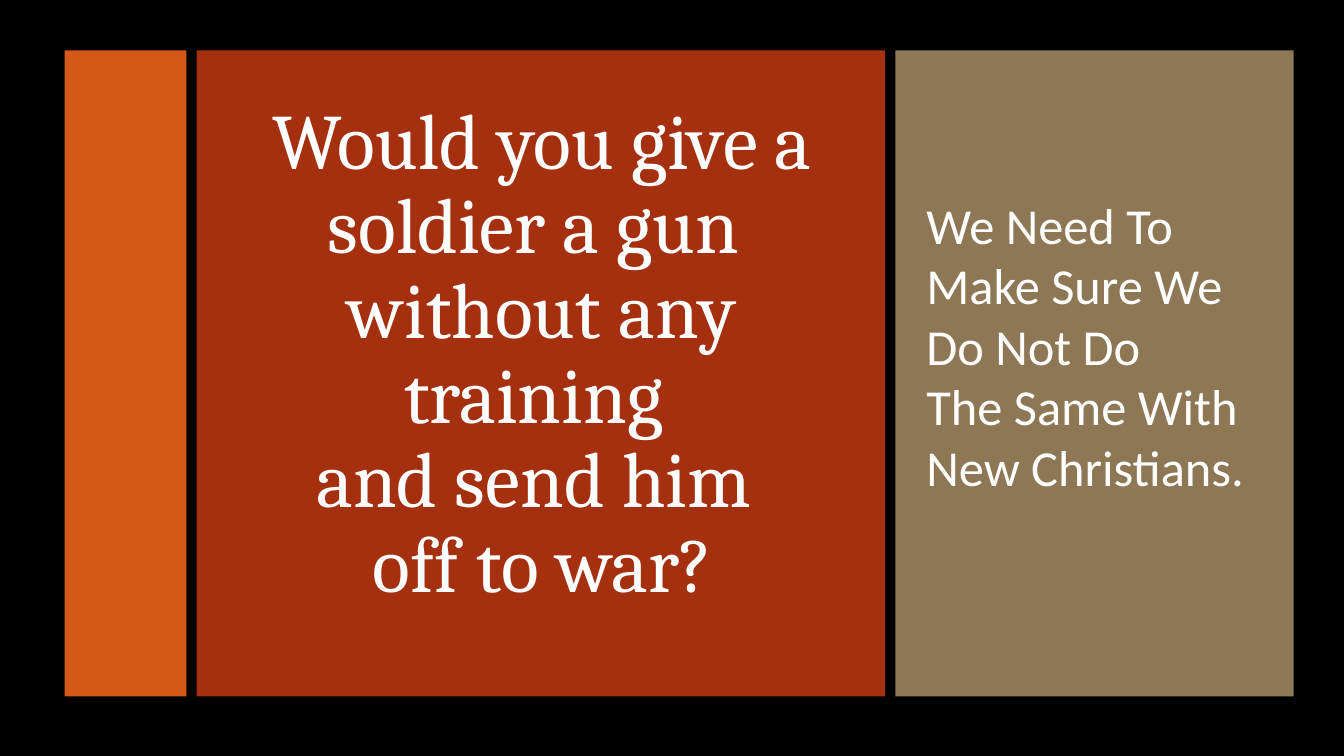
import pptx
import pptx.util
import pptx.dml.color
import pptx.enum.shapes
import pptx.enum.text

Inches = pptx.util.Inches
Pt = pptx.util.Pt
ALIGN = pptx.enum.text.PP_ALIGN

WIDTH, HEIGHT = 13.33, 7.5
BAND_TOP, BAND_HEIGHT = 0.5, 6.41
BAND_LEFT, GAP = 0.64, 0.1
ACCENT_WIDTH, QUESTION_WIDTH, ANSWER_WIDTH = 1.21, 6.83, 3.95


def color(value):
    return pptx.dml.color.RGBColor.from_string(value)


def add_panel(page, box, fill):
    panel = page.shapes.add_shape(
        pptx.enum.shapes.MSO_SHAPE.RECTANGLE, *map(Inches, box))
    panel.shadow.inherit = False
    panel.fill.solid()
    panel.fill.fore_color.rgb = color(fill)
    panel.line.fill.background()


def add_text(page, box, text, font, size, align=ALIGN.LEFT,
             line_spacing=1.0, before=0, after=0):
    frame = page.shapes.add_textbox(*map(Inches, box)).text_frame
    frame.word_wrap = True
    frame.vertical_anchor = pptx.enum.text.MSO_ANCHOR.MIDDLE
    para = frame.paragraphs[0]
    para.alignment = align
    para.line_spacing = line_spacing
    para.space_before = Pt(before)
    para.space_after = Pt(after)
    for index, line in enumerate(text.split("\n")):
        if index:
            para.add_line_break()
        span = para.add_run()
        span.text = line
        span.font.name = font
        span.font.size = Pt(size)
        span.font.color.rgb = color("FFFFFF")


def inset(box, left, top, right, bottom):
    x, y, width, height = box
    return x + left, y + top, width - left - right, height - top - bottom


def question_panel(page, box):
    add_panel(page, box, "A5300F")
    add_text(page, inset(box, 0.41, 0.43, 0.38, 0.79),
             "Would you give a soldier a gun \nwithout any training \n"
             "and send him \noff to war?",
             "Cambria", 56, align=ALIGN.CENTER, line_spacing=0.9)


def answer_panel(page, box):
    add_panel(page, box, "8E7755")
    add_text(page, inset(box, 0.21, 0.23, 0.3, 0.79),
             "We Need To Make Sure We Do Not Do \n"
             "The Same With New Christians.",
             "Calibri", 36, before=7.2, after=6)


def main():
    deck = pptx.Presentation()
    deck.slide_width = Inches(WIDTH)
    deck.slide_height = Inches(HEIGHT)
    page = deck.slides.add_slide(deck.slide_layouts[6])
    page.background.fill.solid()
    page.background.fill.fore_color.rgb = color("000000")
    add_panel(page, (0, 0, WIDTH, HEIGHT), "000000")

    question_left = BAND_LEFT + ACCENT_WIDTH + GAP
    answer_left = question_left + QUESTION_WIDTH + GAP
    add_panel(page, (BAND_LEFT, BAND_TOP, ACCENT_WIDTH, BAND_HEIGHT), "D55816")
    question_panel(page, (question_left, BAND_TOP, QUESTION_WIDTH, BAND_HEIGHT))
    answer_panel(page, (answer_left, BAND_TOP, ANSWER_WIDTH, BAND_HEIGHT))
    deck.save("out.pptx")


if __name__ == "__main__":
    main()
